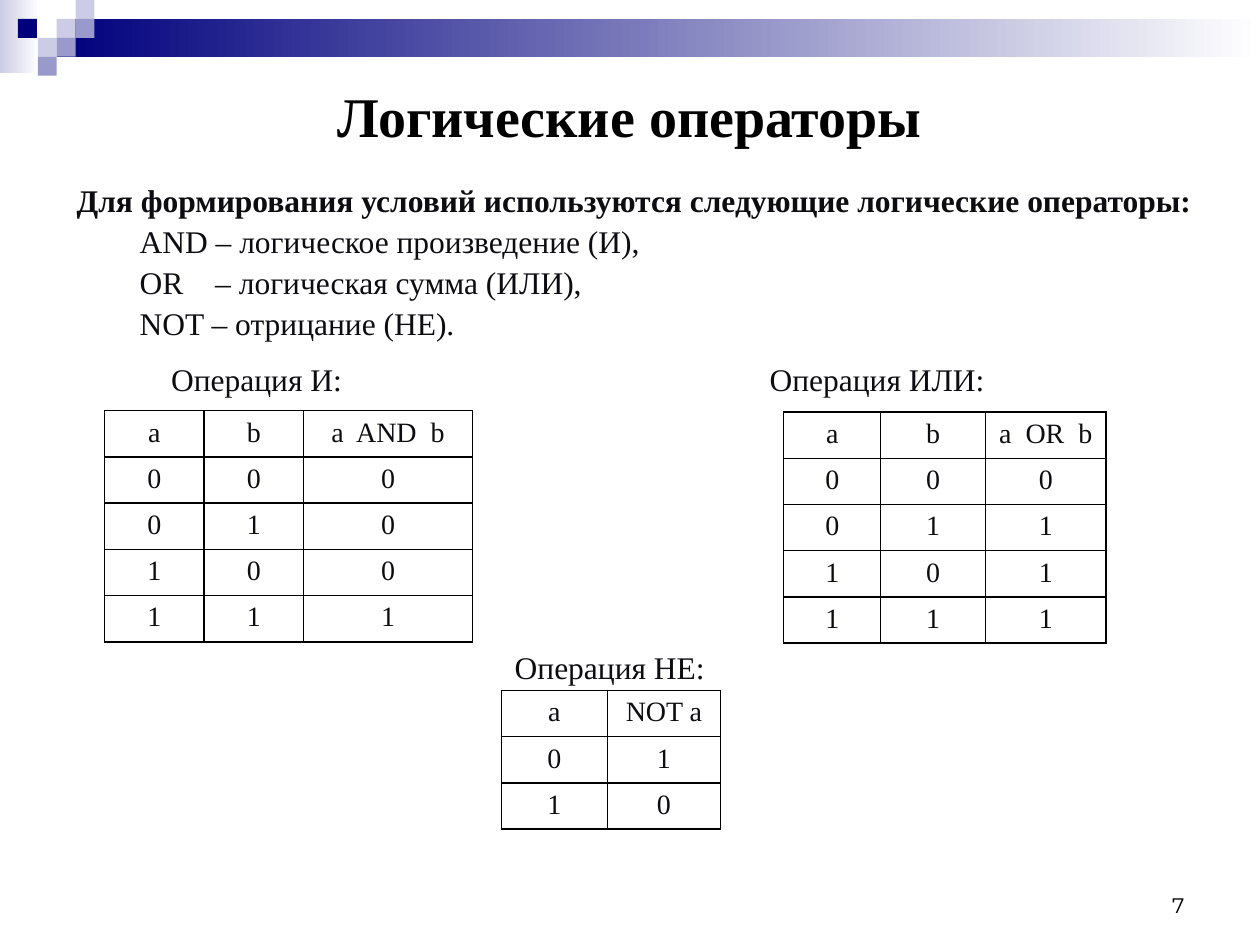
from lxml import etree
from pptx import Presentation
from pptx.dml.color import RGBColor
from pptx.enum.shapes import MSO_SHAPE as Shape
from pptx.enum.text import MSO_ANCHOR as Anchor, PP_ALIGN as Align
from pptx.oxml.ns import qn
from pptx.util import Inches, Pt

THEME = {
    "font": "Times New Roman", "number_font": "Montserrat",
    "black": "000000", "ink": "0D0D11",
    "navy": "00007D", "violet": "9999CC", "lilac": "CCCCE6", "white": "FFFFFF",
    "title": 32, "body": 18, "cell": 16, "number": 12, "border": 1,
}

BANDS = [
    ((0, 0, 0.31, 0.58), "lilac"),
    ((0.45, 0.15, 9.55, 0.3), "navy"),
]
SQUARE = 0.15
SQUARES = [
    (3, 1, "lilac"), (4, 0, "lilac"), (4, 1, "violet"), (2, 2, "lilac"),
    (0.95, 1, "navy"), (3, 2, "violet"), (2, 3, "violet"),
]

TITLE = "Логические операторы"
INTRO = [
    ("Для формирования условий используются следующие логические операторы:", True, 0, ()),
    ("\tAND – логическое произведение (И),", False, 1.8, (0.5,)),
    ("\tOR\t– логическая сумма (ИЛИ),", False, 1.8, (0.5, 1.1)),
    ("\tNOT – отрицание (НЕ).", False, 1.8, (0.5,)),
    ("\tОперация И:\tОперация ИЛИ:", False, 10.2, (0.75, 5.5)),
]
NOT_CAPTION = "Операция НЕ:"
PAGE_NUMBER = "7"

PAIRS = [(0, 0), (0, 1), (1, 0), (1, 1)]
TRUTH_TABLES = [
    ((0.83, 3.26), (0.79, 0.79, 1.34), 1.83,
     [("a", "b", "a  AND  b")] + [(a, b, a & b) for a, b in PAIRS]),
    ((6.22, 3.27), (0.77, 0.83, 0.96), 1.83,
     [("a", "b", "a  OR  b")] + [(a, b, a | b) for a, b in PAIRS]),
    ((3.98, 5.48), (0.84, 0.9), 1.1,
     [("a", "NOT a")] + [(a, 1 - a) for a in (0, 1)]),
]


def color(name):
    return RGBColor.from_string(THEME[name])


def add_block(slide, box, name, gradient=False):
    shape = slide.shapes.add_shape(Shape.RECTANGLE, *map(Inches, box))
    shape.shadow.inherit = False
    shape.line.fill.background()
    if gradient:
        shape.fill.gradient()
        shape.fill.gradient_angle = 0
        for stop, stop_name, position in zip(shape.fill.gradient_stops, (name, "white"), (0, 1)):
            stop.color.rgb = color(stop_name)
            stop.position = position
    else:
        shape.fill.solid()
        shape.fill.fore_color.rgb = color(name)


def write(paragraph, text, size, ink="ink", font="font", bold=False, align=Align.LEFT):
    paragraph.text = text
    paragraph.alignment = align
    for run in paragraph.runs:
        run.font.name = THEME[font]
        run.font.size = Pt(THEME[size])
        run.font.bold = bold
        run.font.color.rgb = color(ink)


def add_text_frame(slide, box, anchor=Anchor.TOP):
    text_frame = slide.shapes.add_textbox(*map(Inches, box)).text_frame
    text_frame.word_wrap = True
    text_frame.vertical_anchor = anchor
    return text_frame


def set_tab_stops(paragraph, stops):
    tab_list = etree.SubElement(paragraph._p.get_or_add_pPr(), qn("a:tabLst"))
    for stop in stops:
        etree.SubElement(tab_list, qn("a:tab"), pos=str(Inches(stop)), algn="l")


def set_borders(cell):
    properties = cell._tc.get_or_add_tcPr()
    for side in ("lnL", "lnR", "lnT", "lnB"):
        line = etree.SubElement(properties, qn(f"a:{side}"), w=str(Pt(THEME["border"])))
        fill = etree.SubElement(line, qn("a:solidFill"))
        etree.SubElement(fill, qn("a:srgbClr"), val=THEME["black"])


def add_truth_table(slide, corner, widths, height, rows):
    box = (*corner, sum(widths), height)
    table = slide.shapes.add_table(len(rows), len(widths), *map(Inches, box)).table
    table.first_row = False
    table.horz_banding = False
    for column, width in zip(table.columns, widths):
        column.width = Inches(width)
    for row, values in zip(table.rows, rows):
        row.height = Inches(height / len(rows))
        for cell, value in zip(row.cells, values):
            write(cell.text_frame.paragraphs[0], str(value), "cell", align=Align.CENTER)
            set_borders(cell)
            cell.fill.background()


def add_intro(slide):
    text_frame = add_text_frame(slide, (0.51, 1.39, 9.21, 1.8))
    for index, (text, bold, space, stops) in enumerate(INTRO):
        paragraph = text_frame.add_paragraph() if index else text_frame.paragraphs[0]
        write(paragraph, text, "body", bold=bold)
        paragraph.space_before = Pt(space)
        if stops:
            set_tab_stops(paragraph, stops)


def main():
    presentation = Presentation()
    presentation.slide_width, presentation.slide_height = Inches(10), Inches(7.5)
    slide = presentation.slides.add_slide(presentation.slide_layouts[6])

    for box, name in BANDS:
        add_block(slide, box, name, gradient=True)
    for column, row, name in SQUARES:
        add_block(slide, (column * SQUARE, row * SQUARE, SQUARE, SQUARE), name)

    title = add_text_frame(slide, (0.75, 0.52, 8.5, 0.71), Anchor.BOTTOM)
    write(title.paragraphs[0], TITLE, "title", "black", bold=True, align=Align.CENTER)
    add_intro(slide)
    for truth_table in TRUTH_TABLES:
        add_truth_table(slide, *truth_table)
    caption = add_text_frame(slide, (3.66, 5.09, 2.36, 0.4))
    write(caption.paragraphs[0], NOT_CAPTION, "body", align=Align.CENTER)
    number = add_text_frame(slide, (7.17, 6.83, 2.33, 0.5), Anchor.BOTTOM)
    write(number.paragraphs[0], PAGE_NUMBER, "number", "black", "number_font", align=Align.RIGHT)

    presentation.save("out.pptx")


if __name__ == "__main__":
    main()
